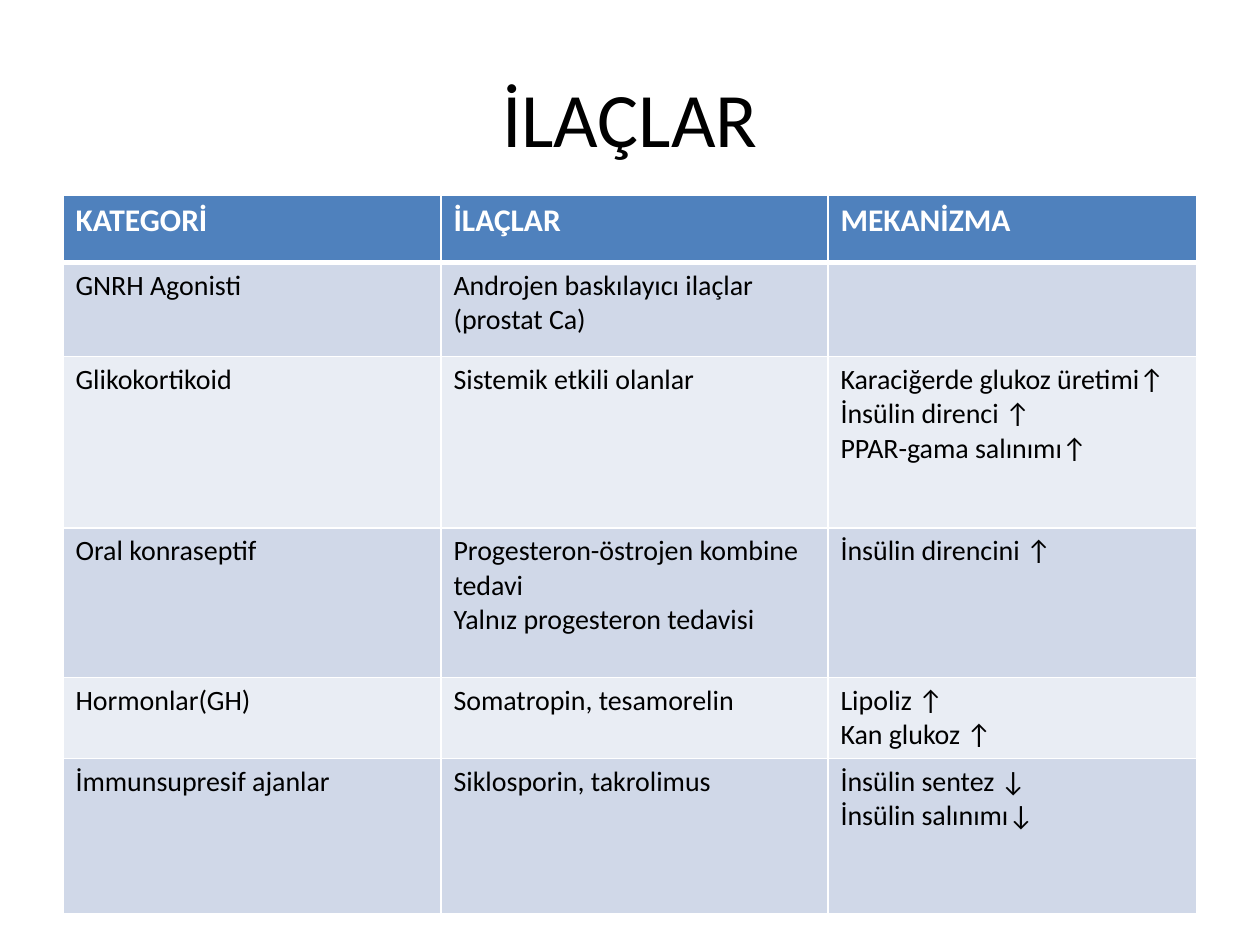
from pptx import Presentation
from pptx.dml.color import RGBColor
from pptx.enum.text import MSO_ANCHOR, PP_ALIGN
from pptx.oxml import parse_xml
from pptx.oxml.ns import nsdecls
from pptx.util import Cm, Pt

# Content: a header row, then one row per drug category
TITLE = "İLAÇLAR"
ROWS = [
    ("KATEGORİ", "İLAÇLAR", "MEKANİZMA"),
    ("GNRH Agonisti", "Androjen baskılayıcı ilaçlar\n(prostat Ca)", ""),
    ("Glikokortikoid", "Sistemik etkili olanlar",
     "Karaciğerde glukoz üretimi↑\nİnsülin direnci ↑\nPPAR-gama salınımı↑"),
    ("Oral konraseptif",
     "Progesteron-östrojen kombine tedavi\nYalnız progesteron tedavisi",
     "İnsülin direncini ↑"),
    ("Hormonlar(GH)", "Somatropin, tesamorelin", "Lipoliz ↑\nKan glukoz ↑"),
    ("İmmunsupresif ajanlar", "Siklosporin, takrolimus",
     "İnsülin sentez ↓\nİnsülin salınımı↓"),
]
WIDTHS = [7.62, 7.8, 7.44]
HEIGHTS = [1.35, 1.9, 3.45, 3.02, 1.63, 3.12]
LEFT, TOP = 1.27, 3.94

FONT = "Calibri"
BLACK = RGBColor(0x00, 0x00, 0x00)
WHITE = RGBColor(0xFF, 0xFF, 0xFF)
BLUE = RGBColor(0x4F, 0x81, 0xBD)
BANDS = [RGBColor(0xE9, 0xED, 0xF4), RGBColor(0xD0, 0xD8, 0xE8)]


def style(frame, size, color, bold=False):
    for para in frame.paragraphs:
        for font in [para.font] + [run.font for run in para.runs]:
            font.name, font.size, font.bold = FONT, Pt(size), bold
            font.color.rgb = color


def border(cell, side, width):
    cell._tc.get_or_add_tcPr().append(parse_xml(
        f'<a:ln{side} {nsdecls("a")} w="{Pt(width)}"><a:solidFill>'
        f'<a:srgbClr val="{WHITE}"/></a:solidFill></a:ln{side}>'))


deck = Presentation()
deck.slide_width, deck.slide_height = Cm(25.4), Cm(19.05)
slide = deck.slides.add_slide(deck.slide_layouts[6])

# Title
box = slide.shapes.add_textbox(Cm(LEFT), Cm(0.76), Cm(sum(WIDTHS)), Cm(3.18))
frame = box.text_frame
frame.word_wrap = True
frame.vertical_anchor = MSO_ANCHOR.MIDDLE
frame.text = TITLE
frame.paragraphs[0].alignment = PP_ALIGN.CENTER
style(frame, 44, BLACK)

# Table grid
table = slide.shapes.add_table(
    len(ROWS), len(WIDTHS), Cm(LEFT), Cm(TOP),
    Cm(sum(WIDTHS)), Cm(sum(HEIGHTS))).table
for col, width in zip(table.columns, WIDTHS):
    col.width = Cm(width)
for row, height in zip(table.rows, HEIGHTS):
    row.height = Cm(height)

# Cells: blue header with a thick rule below, then banded rows
for r, texts in enumerate(ROWS):
    head = r == 0
    for c, text in enumerate(texts):
        cell = table.cell(r, c)
        cell.text_frame.text = text
        style(cell.text_frame, 18 if head else 16,
              WHITE if head else BLACK, head)
        for side in "LRTB":
            thick = (head and side == "B") or (r == 1 and side == "T")
            border(cell, side, 3 if thick else 1)
        cell.fill.solid()
        cell.fill.fore_color.rgb = BLUE if head else BANDS[r % 2]

deck.save("out.pptx")
